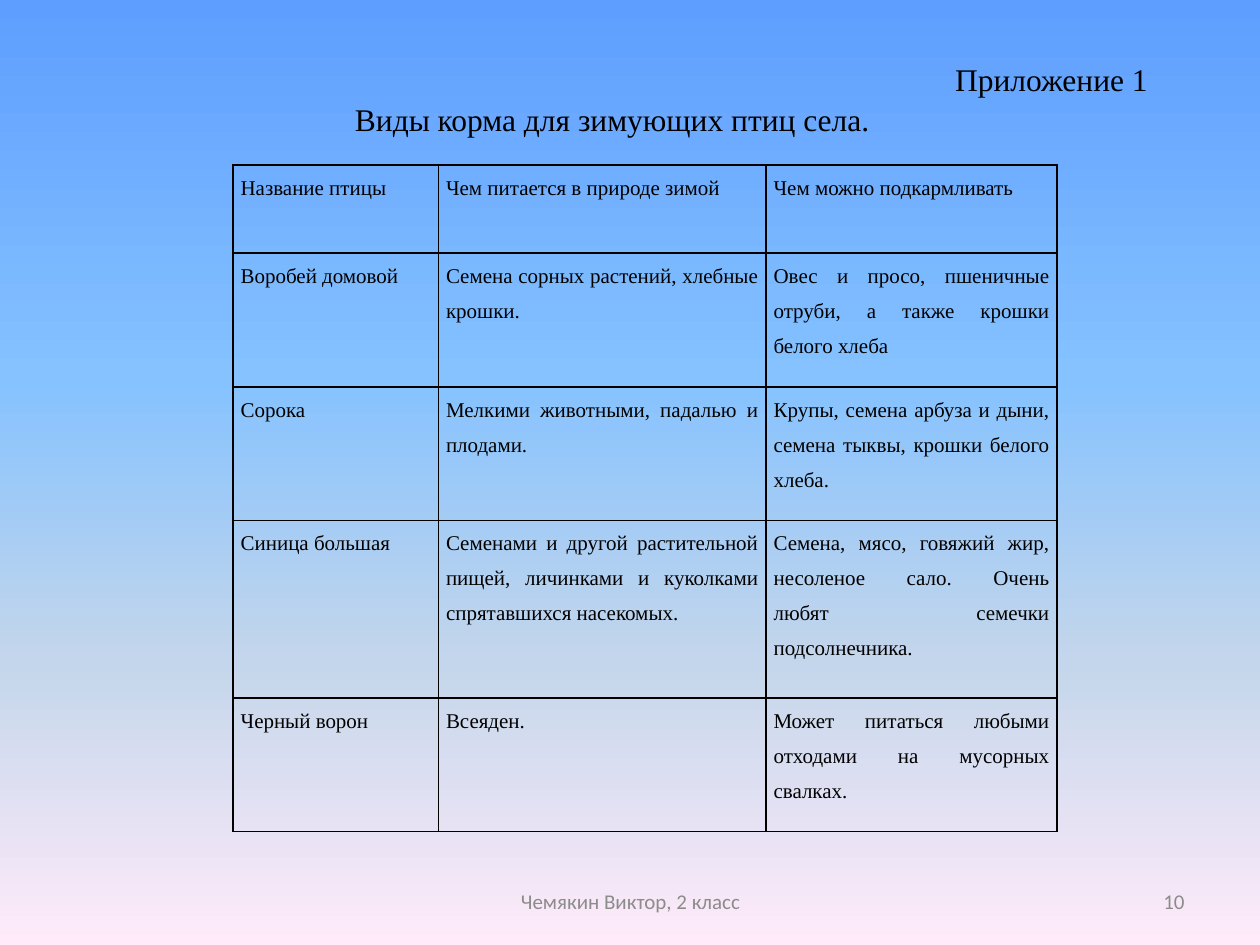
from lxml import etree
from pptx import Presentation
from pptx import util as u
from pptx.dml.color import RGBColor
from pptx.enum import text
from pptx.oxml.ns import qn

ALIGN = text.PP_ALIGN
ANCHOR = text.MSO_ANCHOR
SERIF = {"name": "Times New Roman", "color": "000000"}


def color(hex_value):
    return RGBColor.from_string(hex_value)


def write(frame, lines, font, paragraph_format):
    """Fill a text frame with one paragraph per (wording, alignment) pair."""
    for index, (wording, alignment) in enumerate(lines):
        paragraph = frame.add_paragraph() if index else frame.paragraphs[0]
        paragraph.text = wording
        paragraph.alignment = alignment
        for key, value in paragraph_format.items():
            setattr(paragraph, key, value)
        for run in paragraph.runs:
            run.font.name = font["name"]
            run.font.size = u.Pt(font["size"])
            run.font.color.rgb = color(font["color"])


deck = Presentation()
deck.slide_width, deck.slide_height = u.Inches(10), u.Inches(7.5)
slide = deck.slides.add_slide(deck.slide_layouts[6])

# Sky gradient, top to bottom
sky = slide.background.fill
sky.gradient()
sky.gradient_angle = 270
stops = next(slide.element.iter(qn("a:gsLst")))
for stop in list(stops):
    stops.remove(stop)
for percent, shade in [(0, "5E9EFF"), (40, "85C2FF"), (70, "C4D6EB"), (100, "FFEBFA")]:
    stop = etree.SubElement(stops, qn("a:gs"), pos=str(percent * 1000))
    etree.SubElement(stop, qn("a:srgbClr"), val=shade)

# Heading, footer and page number
gray = {"name": "Calibri", "size": 12, "color": "8C8C8C"}
heading = [("Приложение 1", ALIGN.RIGHT),
           ("Виды корма для зимующих птиц села.", ALIGN.CENTER)]
captions = [
    ((0.5, 0.3, 9, 1.25), (0.11, 0.18, 0.39, 0), ANCHOR.TOP,
     heading, {**SERIF, "size": 18}),
    ((3.42, 6.95, 3.17, 0.4), (0.1, 0.05, 0.1, 0.05), ANCHOR.MIDDLE,
     [("Чемякин Виктор, 2 класс", ALIGN.CENTER)], gray),
    ((7.17, 6.95, 2.33, 0.4), (0.1, 0.05, 0.1, 0.05), ANCHOR.MIDDLE,
     [("10", ALIGN.RIGHT)], gray),
]
for place, insets, anchor, lines, font in captions:
    frame = slide.shapes.add_textbox(*map(u.Inches, place)).text_frame
    frame.word_wrap = True
    frame.vertical_anchor = anchor
    for side, inset in zip(("left", "top", "right", "bottom"), insets):
        setattr(frame, f"margin_{side}", u.Inches(inset))
    write(frame, lines, font, {"space_after": u.Pt(1)})

# Table of birds and their food
birds = [
    ("Название птицы", "Чем питается в природе зимой", "Чем можно подкармливать"),
    ("Воробей домовой", "Семена сорных растений, хлебные крошки.",
     "Овес и просо, пшеничные отруби, а также крошки белого хлеба"),
    ("Сорока", "Мелкими животными, падалью и плодами.",
     "Крупы, семена арбуза и дыни, семена тыквы, крошки белого хлеба."),
    ("Синица большая",
     "Семенами и другой растительной пищей, личинками и куколками спрятавшихся насекомых.",
     "Семена, мясо, говяжий жир, несоленое сало. Очень\vлюбят семечки\vподсолнечника."),
    ("Черный ворон", "Всеяден.",
     "Может питаться любыми отходами на мусорных свалках."),
]
column_widths = [1.63, 2.6, 2.31]
row_heights = [0.7, 1.06, 1.06, 1.41, 1.06]
food = slide.shapes.add_table(
    len(birds), len(column_widths), u.Inches(1.85), u.Inches(1.31),
    u.Inches(sum(column_widths)), u.Inches(sum(row_heights))).table
food.first_row = food.horz_banding = False
for column, width in zip(food.columns, column_widths):
    column.width = u.Inches(width)
for row, height in zip(food.rows, row_heights):
    row.height = u.Inches(height)

cell_format = {"margin_left": u.Inches(0.06), "margin_right": u.Inches(0.06),
               "margin_top": 0, "margin_bottom": 0, "vertical_anchor": ANCHOR.TOP}
cell_spacing = {"line_spacing": 1.5, "space_after": u.Pt(10)}
for row, wordings in zip(food.rows, birds):
    for cell, wording in zip(row.cells, wordings):
        for key, value in cell_format.items():
            setattr(cell, key, value)
        write(cell.text_frame, [(wording, ALIGN.JUSTIFY)], {**SERIF, "size": 12}, cell_spacing)
        cell.fill.background()
        # Borders go before the fill in the cell properties
        properties = cell._tc.get_or_add_tcPr()
        for index, edge in enumerate(("a:lnL", "a:lnR", "a:lnT", "a:lnB")):
            border = etree.Element(qn(edge), w=str(u.Pt(1)))
            paint = etree.SubElement(border, qn("a:solidFill"))
            etree.SubElement(paint, qn("a:srgbClr"), val="000000")
            properties.insert(index, border)

deck.save("out.pptx")
